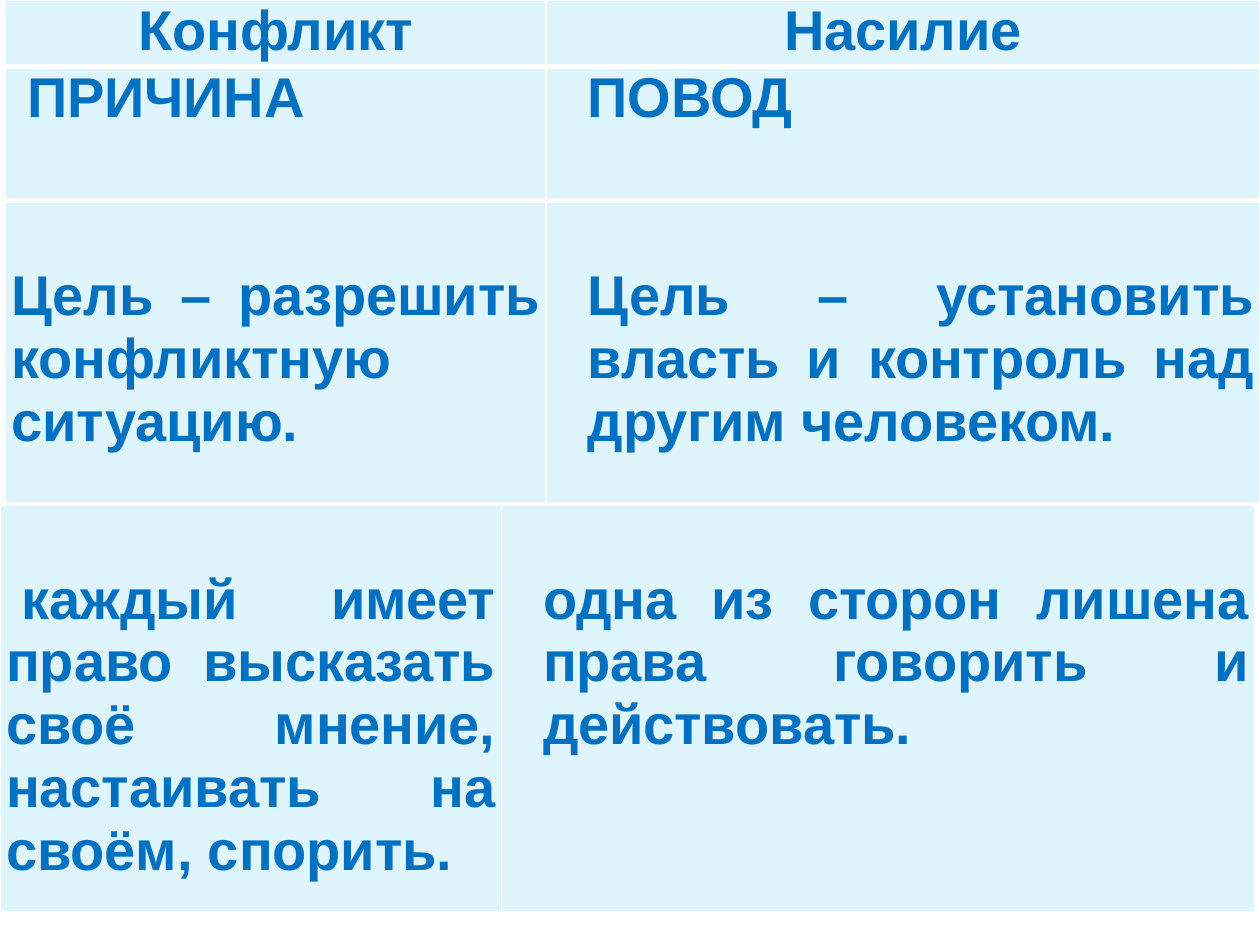
from dataclasses import dataclass

from lxml import etree
from pptx import Presentation
from pptx.dml.color import RGBColor
from pptx.enum.text import PP_ALIGN
from pptx.oxml.ns import qn
from pptx.util import Pt

CENTER = PP_ALIGN.CENTER
JUSTIFY = PP_ALIGN.JUSTIFY

TEXT_COLOR = "0070C0"
CELL_COLOR = "DFF5FD"
BORDER_COLOR = "FFFFFF"
THIN, THICK = 1, 3
SIDE_MARGIN = 3.6
LINE_HEIGHT = 36.8
SPACE_WIDTH = 8.9
RIGHT_COLUMN_INDENT = 20.2
FONT_FORMAT = {"name": "Arial", "size": Pt(32), "bold": True}


@dataclass
class Entry:
    text: str
    align: PP_ALIGN = JUSTIFY
    left_indent: float = 0
    first_indent: float = 0
    lines_above: int = 0


@dataclass
class Grid:
    left: float
    top: float
    columns: list[float]
    rows: list[float]
    entries: list[list[Entry]]
    top_border: float


GRIDS = [
    Grid(3, 0, [309, 408], [38, 76.5, 173.5], [
        [Entry("Конфликт", CENTER), Entry("Насилие", CENTER)],
        [Entry("ПРИЧИНА", first_indent=SPACE_WIDTH),
         Entry("ПОВОД", left_indent=RIGHT_COLUMN_INDENT)],
        [Entry("Цель – разрешить конфликтную ситуацию.", lines_above=1),
         Entry("Цель – установить власть и контроль над другим человеком.",
               left_indent=RIGHT_COLUMN_INDENT, lines_above=1)],
    ], THIN),
    Grid(0, 288, [286.5, 430.5], [234], [
        [Entry("каждый имеет право высказать своё мнение, настаивать на своём, спорить.",
               first_indent=SPACE_WIDTH, lines_above=1),
         Entry("одна из сторон лишена права говорить и действовать.",
               left_indent=RIGHT_COLUMN_INDENT, lines_above=1)],
    ], THICK),
]


def color(value: str) -> RGBColor:
    return RGBColor.from_string(value)


def set_attributes(target, values: dict) -> None:
    for name, value in values.items():
        setattr(target, name, value)


def draw_borders(cell, top: float, bottom: float) -> None:
    properties = cell._tc.get_or_add_tcPr()
    for side, width in {"L": THIN, "R": THIN, "T": top, "B": bottom}.items():
        line = etree.SubElement(properties, qn(f"a:ln{side}"), w=str(Pt(width)))
        fill = etree.SubElement(line, qn("a:solidFill"))
        etree.SubElement(fill, qn("a:srgbClr"), val=BORDER_COLOR)


def fill_cell(cell, entry: Entry) -> None:
    cell.fill.solid()
    cell.fill.fore_color.rgb = color(CELL_COLOR)
    set_attributes(cell, {
        "margin_left": Pt(SIDE_MARGIN),
        "margin_right": Pt(SIDE_MARGIN),
        "margin_top": Pt(entry.lines_above * LINE_HEIGHT),
        "margin_bottom": Pt(0),
    })
    para = cell.text_frame.paragraphs[0]
    para.alignment = entry.align
    indents = para._p.get_or_add_pPr()
    indents.set("marL", str(Pt(entry.left_indent)))
    indents.set("indent", str(Pt(entry.first_indent)))
    span = para.add_run()
    span.text = entry.text
    set_attributes(span.font, FONT_FORMAT)
    span.font.color.rgb = color(TEXT_COLOR)
    span._r.get_or_add_rPr().set("spc", "-10")


def draw_grid(page, grid: Grid) -> None:
    frame = page.shapes.add_table(
        len(grid.rows), len(grid.columns), Pt(grid.left), Pt(grid.top),
        Pt(sum(grid.columns)), Pt(sum(grid.rows)))
    table = frame.table
    set_attributes(table, {"first_row": False, "horz_banding": False})
    for column, width in zip(table.columns, grid.columns):
        column.width = Pt(width)
    for row, height in zip(table.rows, grid.rows):
        row.height = Pt(height)
    for row_index, entries in enumerate(grid.entries):
        top = THICK if row_index else grid.top_border
        for column_index, entry in enumerate(entries):
            cell = table.cell(row_index, column_index)
            draw_borders(cell, top, THICK)
            fill_cell(cell, entry)


def main() -> None:
    deck = Presentation()
    set_attributes(deck, {"slide_width": Pt(720), "slide_height": Pt(540)})
    page = deck.slides.add_slide(deck.slide_layouts[6])
    for grid in GRIDS:
        draw_grid(page, grid)
    deck.save("out.pptx")


if __name__ == "__main__":
    main()
